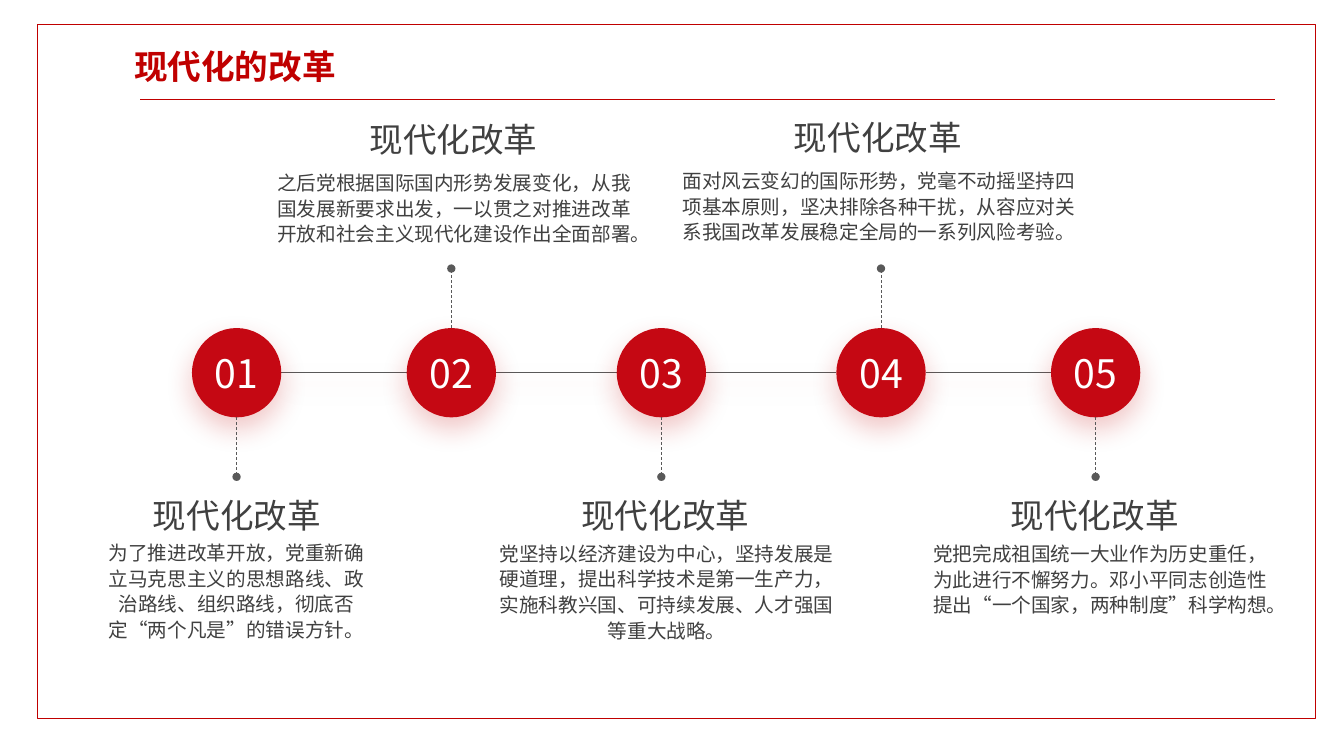
"""Build a five-step timeline slide about modernising reform."""
from dataclasses import dataclass
from itertools import pairwise

from lxml import etree
from pptx import Presentation
from pptx.dml.color import RGBColor
from pptx.enum.dml import MSO_LINE
from pptx.enum.shapes import MSO_CONNECTOR, MSO_SHAPE
from pptx.enum.text import MSO_ANCHOR, MSO_AUTO_SIZE, PP_ALIGN
from pptx.oxml.ns import qn
from pptx.shapes.autoshape import Shape
from pptx.shapes.connector import Connector
from pptx.slide import Slide
from pptx.text.text import TextFrame
from pptx.util import Pt

STRAIGHT = MSO_CONNECTOR.STRAIGHT
RECTANGLE, OVAL = MSO_SHAPE.RECTANGLE, MSO_SHAPE.OVAL
DASH = MSO_LINE.DASH
TOP, MIDDLE = MSO_ANCHOR.TOP, MSO_ANCHOR.MIDDLE
CENTER, JUSTIFY = PP_ALIGN.CENTER, PP_ALIGN.JUSTIFY
NO_AUTOFIT = MSO_AUTO_SIZE.NONE

FONT = "Noto Sans CJK SC"
RED, CIRCLE_RED, SHADOW_RED = "C00000", "C50813", "C30F0F"
WHITE, GREY, TEXT_GREY = "FFFFFF", "595959", "404040"

AXIS_Y = 266.2
RADIUS = 31.9
STEM = 42.5
HEADING = "现代化改革"
HEADING_WIDTH, HEADING_HEIGHT = 246.2, 38.2


@dataclass(frozen=True)
class Box:
    """A rectangle in points."""

    left: float
    top: float
    width: float
    height: float


@dataclass(frozen=True)
class Step:
    """One timeline step; direction is -1 for above the axis, 1 for below."""

    center: float
    direction: int
    heading_left: float
    heading_top: float
    body: Box
    text: str


STEPS = (
    Step(169, 1, 46.1, 344.2, Box(67, 380.9, 203.8, 79.9),
         "为了推进改革开放，党重新确立马克思主义的思想路线、政治路线、组织路线，彻底否定“两个凡是”的错误方针。"),
    Step(322.4, -1, 200.9, 75.6, Box(189.4, 116.6, 270, 61.2),
         "之后党根据国际国内形势发展变化，从我国发展新要求出发，一以贯之对推进改革开放和社会主义现代化建设作出全面部署。"),
    Step(472.4, 1, 352.1, 344.2, Box(347.8, 381.6, 257, 81.4),
         "党坚持以经济建设为中心，坚持发展是硬道理，提出科学技术是第一生产力，实施科教兴国、可持续发展、人才强国等重大战略。"),
    Step(629.3, -1, 504, 74.2, Box(475.9, 115.2, 303.8, 61.2),
         "面对风云变幻的国际形势，党毫不动摇坚持四项基本原则，坚决排除各种干扰，从容应对关系我国改革发展稳定全局的一系列风险考验。"),
    Step(782.6, 1, 658.8, 344.2, Box(657.4, 381.6, 257, 61.2),
         "党把完成祖国统一大业作为历史重任，为此进行不懈努力。邓小平同志创造性提出“一个国家，两种制度”科学构想。"),
)


def color(value: str) -> RGBColor:
    """Turn a hex string into a colour."""
    return RGBColor.from_string(value)


def write(frame: TextFrame, text: str, size: float, ink: str,
          alignment: PP_ALIGN = CENTER, spacing: float = 1,
          bold: bool = False) -> None:
    """Fill a text frame with one formatted paragraph."""
    frame.word_wrap = True
    frame.text = text
    para = frame.paragraphs[0]
    para.alignment = alignment
    para.line_spacing = spacing
    para.space_before = Pt(0)
    for span in para.runs:
        span.font.size = Pt(size)
        span.font.bold = bold
        span.font.color.rgb = color(ink)
        span.font.name = FONT
        latin = span.font._element.find(qn("a:latin"))
        latin.addnext(latin.makeelement(qn("a:ea"), {"typeface": FONT}))


def add_text(page: Slide, box: Box, text: str, size: float,
             spacing: float) -> None:
    """Add a centred grey text box."""
    shape = page.shapes.add_textbox(
        Pt(box.left), Pt(box.top), Pt(box.width), Pt(box.height))
    write(shape.text_frame, text, size, TEXT_GREY, spacing=spacing)


def add_filled(page: Slide, kind: MSO_SHAPE, box: Box, fill: str) -> Shape:
    """Add a filled shape with neither outline nor shadow."""
    shape = page.shapes.add_shape(
        kind, Pt(box.left), Pt(box.top), Pt(box.width), Pt(box.height))
    shape.shadow.inherit = False
    shape.fill.solid()
    shape.fill.fore_color.rgb = color(fill)
    shape.line.fill.background()
    return shape


def add_line(page: Slide, x1: float, y1: float, x2: float, y2: float,
             ink: str, width: float) -> Connector:
    """Add a straight line without a shadow."""
    line = page.shapes.add_connector(STRAIGHT, Pt(x1), Pt(y1), Pt(x2), Pt(y2))
    line.line.color.rgb = color(ink)
    line.line.width = Pt(width)
    etree.SubElement(line.element.spPr, qn("a:effectLst"))
    return line


def add_glow(shape: Shape | Connector) -> None:
    """Put a soft red shadow below a shape or line."""
    effects = shape.element.spPr.find(qn("a:effectLst"))
    shadow = etree.SubElement(
        effects, qn("a:outerShdw"), blurRad=str(Pt(20)), dist=str(Pt(8)),
        dir="5400000", algn="t", rotWithShape="0")
    tint = etree.SubElement(shadow, qn("a:srgbClr"), val=SHADOW_RED)
    etree.SubElement(tint, qn("a:alpha"), val="23000")


def add_step(page: Slide, number: int, step: Step) -> None:
    """Draw a numbered circle with its stem, heading and body."""
    circle = add_filled(
        page, OVAL,
        Box(step.center - RADIUS, AXIS_Y - RADIUS, 2 * RADIUS, 2 * RADIUS),
        CIRCLE_RED)
    add_glow(circle)
    frame = circle.text_frame
    frame.margin_left = frame.margin_right = Pt(0)
    frame.margin_top = frame.margin_bottom = Pt(0)
    frame.vertical_anchor = MIDDLE
    write(frame, f"{number:02}", 28, WHITE)

    edge = AXIS_Y + step.direction * RADIUS
    stem = add_line(page, step.center, edge, step.center,
                    edge + step.direction * STEM, GREY, 0.5)
    stem.line.dash_style = DASH
    etree.SubElement(stem.line._get_or_add_ln(), qn("a:tailEnd"), type="oval")

    heading = Box(step.heading_left, step.heading_top,
                  HEADING_WIDTH, HEADING_HEIGHT)
    add_text(page, heading, HEADING, 24, 1.2)
    add_text(page, step.body, step.text, 14, 1.1)


def add_title(page: Slide, text: str) -> None:
    """Place the title in front of the frame."""
    title = page.shapes.title
    title.left, title.top = Pt(88.6), Pt(29.5)
    title.width, title.height = Pt(181.4), Pt(36)
    title.text_frame.auto_size = NO_AUTOFIT
    title.text_frame.vertical_anchor = TOP
    write(title.text_frame, text, 24, RED, JUSTIFY, bold=True)
    title.element.getparent().append(title.element)


def main() -> None:
    """Build and save the deck."""
    deck = Presentation()
    deck.slide_width, deck.slide_height = Pt(960), Pt(540)
    page = deck.slides.add_slide(deck.slide_layouts[5])

    border = add_filled(page, RECTANGLE, Box(26.6, 17.3, 913, 496.1), WHITE)
    border.line.color.rgb = color(RED)
    border.line.width = Pt(1)
    add_line(page, 100.1, 71.3, 910.8, 71.3, RED, 0.5)

    for left, right in pairwise(STEPS):
        link = add_line(page, left.center + RADIUS, AXIS_Y,
                        right.center - RADIUS, AXIS_Y, GREY, 1)
        add_glow(link)
    for number, step in enumerate(STEPS, start=1):
        add_step(page, number, step)
    add_title(page, "现代化的改革")
    deck.save("out.pptx")


if __name__ == "__main__":
    main()
